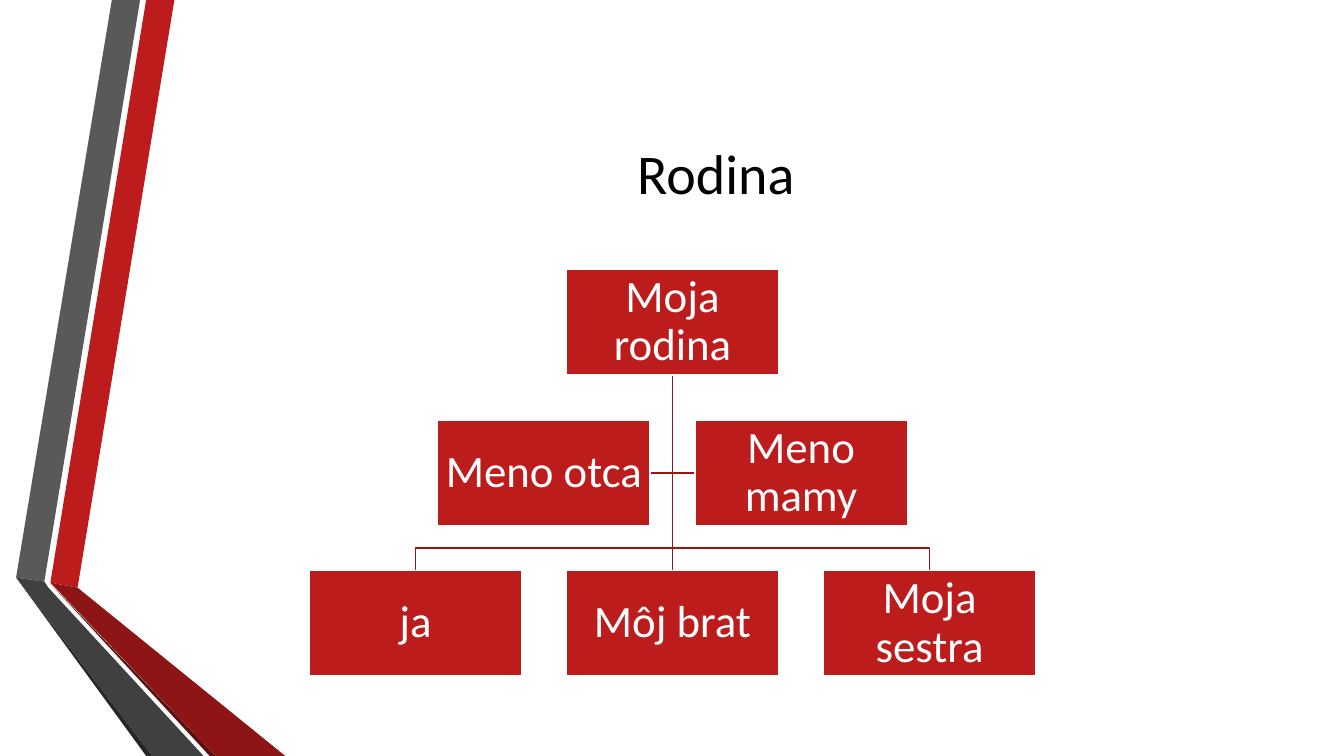
"""Build the family tree slide."""
from lxml import etree
from pptx import Presentation
from pptx.dml.color import RGBColor
from pptx.enum.shapes import MSO_CONNECTOR, MSO_SHAPE
from pptx.enum.text import MSO_ANCHOR, PP_ALIGN
from pptx.oxml.ns import qn
from pptx.util import Inches, Pt

STRAIGHT = MSO_CONNECTOR.STRAIGHT
RECTANGLE = MSO_SHAPE.RECTANGLE
MIDDLE = MSO_ANCHOR.MIDDLE
CENTER = PP_ALIGN.CENTER
TOP, LEFT, BOTTOM, RIGHT = range(4)

RED, LINE_RED, WHITE, BLACK = "BC1C1C", "971616", "FFFFFF", "000000"
BOX_WIDTH, BOX_HEIGHT = 2.11, 1.05
TREE_CENTER, TREE_TOP = 6.67, 2.67
COLUMN_STEP, LEVEL_STEP = 2.55, 1.495
BRANCH_Y = 5.44

RIBBONS = [
    (RED, [(0.5, 5.78), (0.77, 5.83), (1.73, 0), (1.45, 0)]),
    ("595959", [(1.39, 0), (1.11, 0), (0.16, 5.73), (0.44, 5.77)]),
    ("262626", [(0.16, 5.73), (1.45, 7.5), (1.51, 7.5)]),
    ("5E0E0E", [(0.5, 5.79), (2.08, 7.5), (2.14, 7.5)]),
    ("8D1515", [(0.5, 5.78), (2.14, 7.5), (2.83, 7.5), (0.77, 5.83)]),
    ("404040", [(2.02, 7.5), (0.48, 5.83), (0.44, 5.77), (0.16, 5.73), (1.51, 7.5)]),
]

FAMILY = [
    ("Moja rodina", 0, 0),
    ("ja", -1, 2),
    ("Môj brat", 0, 2),
    ("Moja sestra", 1, 2),
    ("Meno otca", -0.5, 1),
    ("Meno mamy", 0.5, 1),
]


def color(hex_text):
    """Turn a hex string into a colour."""
    return RGBColor.from_string(hex_text)


def column_x(column):
    """Return the centre of a tree column."""
    return TREE_CENTER + column * COLUMN_STEP


def level_y(level):
    """Return the top of a tree level."""
    return TREE_TOP + level * LEVEL_STEP


def set_text(shape, text, size=32, font_color=WHITE, inset=0.02, line_spacing=0.9, space_after=11):
    """Write one centred paragraph into a shape."""
    frame = shape.text_frame
    frame.word_wrap = True
    frame.vertical_anchor = MIDDLE
    frame.margin_left = frame.margin_right = Inches(inset)
    frame.margin_top = frame.margin_bottom = Inches(inset)
    paragraph = frame.paragraphs[0]
    paragraph.alignment = CENTER
    paragraph.line_spacing = line_spacing
    paragraph.space_after = Pt(space_after)
    run = paragraph.add_run()
    run.text = text
    run.font.name = "Calibri"
    run.font.size = Pt(size)
    run.font.color.rgb = color(font_color)


def set_line(shape, line_color):
    """Give a shape or connector its line."""
    shape.line.color.rgb = color(line_color)
    shape.line.width = Pt(1.25)


def add_outline(slide, points, close):
    """Draw a freeform through points given in inches."""
    corners = [(Inches(x), Inches(y)) for x, y in points]
    builder = slide.shapes.build_freeform(*corners[0])
    builder.add_line_segments(corners[1:], close=close)
    shape = builder.convert_to_shape()
    shape.shadow.inherit = False
    return shape


def add_ribbon(slide, fill, points):
    """Draw one filled piece of the side ribbon."""
    shape = add_outline(slide, points, close=True)
    shape.fill.solid()
    shape.fill.fore_color.rgb = color(fill)
    shape.line.fill.background()


def add_branch(slide, column):
    """Draw the bent line from the root to a child column."""
    start = (TREE_CENTER, level_y(0) + BOX_HEIGHT)
    end_x = column_x(column)
    points = [start, (TREE_CENTER, BRANCH_Y), (end_x, BRANCH_Y), (end_x, level_y(2))]
    shape = add_outline(slide, points, close=False)
    shape.fill.background()
    set_line(shape, LINE_RED)


def add_link(slide):
    """Add a straight line that is joined to its boxes later."""
    connector = slide.shapes.add_connector(STRAIGHT, 0, 0, 0, 0)
    set_line(connector, LINE_RED)
    etree.SubElement(connector._element.spPr, qn("a:effectLst"))
    return connector


def join(connector, first, first_side, second, second_side):
    """Attach both ends of a connector to boxes."""
    connector.begin_connect(first, first_side)
    connector.end_connect(second, second_side)


def add_box(slide, text, column, level):
    """Add one family member box."""
    shape = slide.shapes.add_shape(
        RECTANGLE, Inches(column_x(column) - BOX_WIDTH / 2), Inches(level_y(level)),
        Inches(BOX_WIDTH), Inches(BOX_HEIGHT))
    shape.shadow.inherit = False
    shape.fill.solid()
    shape.fill.fore_color.rgb = color(RED)
    set_line(shape, WHITE)
    set_text(shape, text)
    return shape


def add_title(slide, text):
    """Add the slide title."""
    box = slide.shapes.add_textbox(Inches(1.62), Inches(0.75), Inches(10.96), Inches(1.92))
    set_text(box, text, size=40, font_color=BLACK, inset=0.05, line_spacing=1.0, space_after=0)


def main():
    """Build and save the presentation."""
    presentation = Presentation()
    presentation.slide_width = Inches(13.33)
    presentation.slide_height = Inches(7.5)
    slide = presentation.slides.add_slide(presentation.slide_layouts[6])
    for fill, points in RIBBONS:
        add_ribbon(slide, fill, points)
    add_title(slide, "Rodina")
    for column in (-1, 1):
        add_branch(slide, column)
    trunk, parents = add_link(slide), add_link(slide)
    boxes = {text: add_box(slide, text, column, level) for text, column, level in FAMILY}
    join(trunk, boxes["Moja rodina"], BOTTOM, boxes["Môj brat"], TOP)
    join(parents, boxes["Meno otca"], RIGHT, boxes["Meno mamy"], LEFT)
    presentation.save("out.pptx")


if __name__ == "__main__":
    main()
